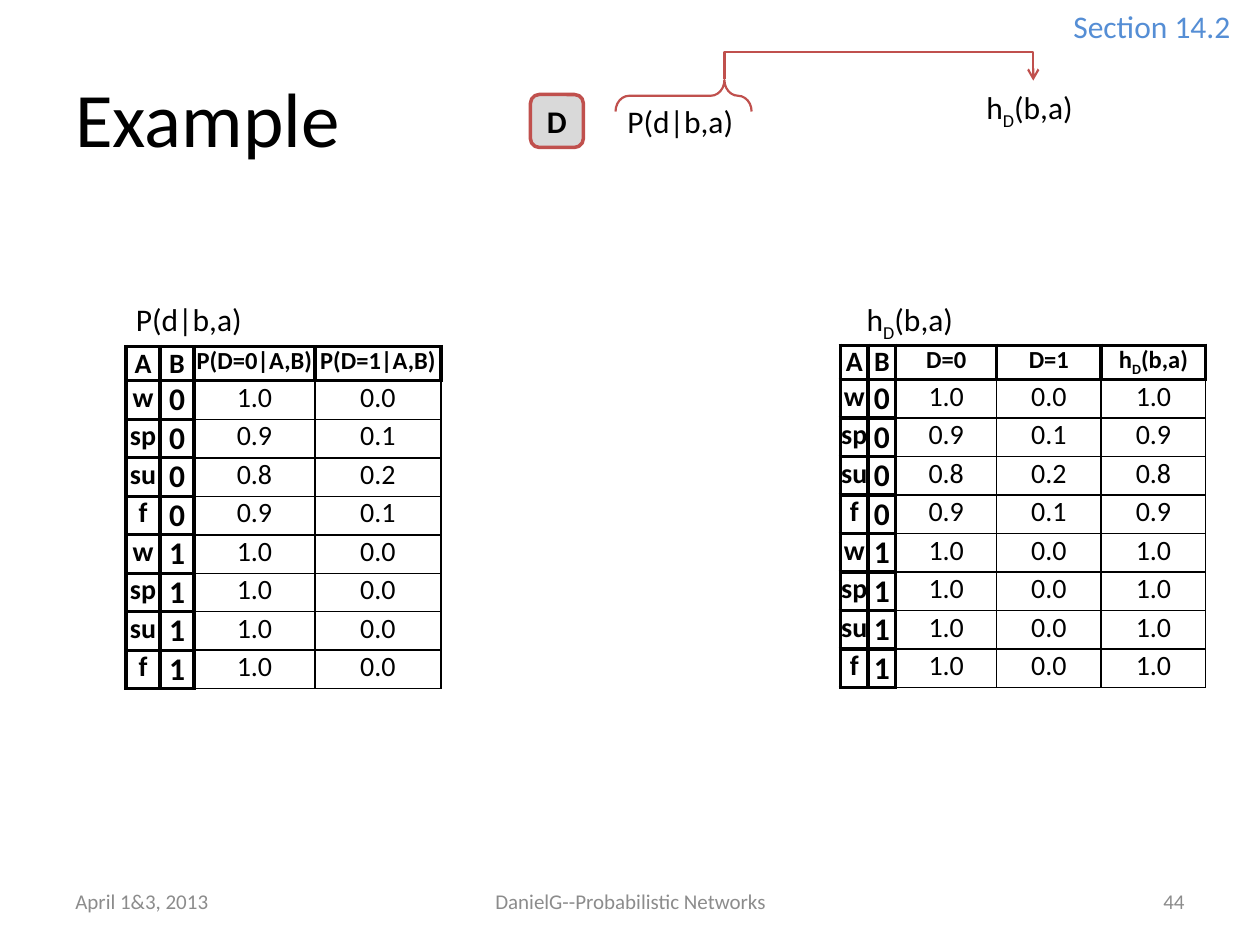
from lxml import etree
from pptx import Presentation
from pptx import util as u
from pptx.dml.color import RGBColor
from pptx.enum import shapes, text
from pptx.oxml import parse_xml
from pptx.oxml.ns import nsdecls, qn

COLORS = {"black": "000000", "gray": "8C8C8C", "red": "C0504D",
          "light": "D9D9D9", "blue": "558ED5"}
LEFT, CENTER, RIGHT = text.PP_ALIGN.LEFT, text.PP_ALIGN.CENTER, text.PP_ALIGN.RIGHT
MIDDLE, TOP = text.MSO_ANCHOR.MIDDLE, text.MSO_ANCHOR.TOP
GROW, FIXED = text.MSO_AUTO_SIZE.SHAPE_TO_FIT_TEXT, text.MSO_AUTO_SIZE.NONE


def write(frame, content, size=18, color="black", bold=False, align=LEFT):
    paragraph = frame.paragraphs[0]
    paragraph.alignment = align
    for index, part in enumerate(content.split("_")):
        run = paragraph.add_run()
        run.text = part
        run.font.name = "Calibri"
        run.font.size = u.Pt(size)
        run.font.bold = bold
        run.font.color.rgb = RGBColor.from_string(COLORS[color])
        if index % 2:
            run.font._element.set("baseline", "-25000")


def set_borders(cell, widths):
    properties = cell._tc.get_or_add_tcPr()
    for index, (side, width) in enumerate(widths.items()):
        properties.insert(index, parse_xml(
            f'<a:ln{side} {nsdecls("a")} w="{u.Pt(width)}"><a:solidFill>'
            f'<a:srgbClr val="{COLORS["black"]}"/></a:solidFill></a:ln{side}>'))


presentation = Presentation()
presentation.slide_width = u.Inches(10)
presentation.slide_height = u.Inches(7.5)
slide = presentation.slides.add_slide(presentation.slide_layouts[6])

seasons = ["w", "sp", "su", "f"] * 2
chances = [("1.0", "0.0"), ("0.9", "0.1"), ("0.8", "0.2"), ("0.9", "0.1")] + [("1.0", "0.0")] * 4
probability_rows = [(season, str(index // 4), *chance)
                    for index, (season, chance) in enumerate(zip(seasons, chances))]
factor_rows = [(*row, row[2]) for row in probability_rows]

tables = [
    (1, 2.75, [0.27, 0.27, 0.96, 1],
     [("A", "B", "P(D=0|A,B)", "P(D=1|A,B)")] + probability_rows),
    (6.67, 2.74, [0.22, 0.22, 0.8, 0.83, 0.83],
     [("A", "B", "D=0", "D=1", "h_D_(b,a)")] + factor_rows),
]
for left, top, column_widths, rows in tables:
    graphic = slide.shapes.add_table(len(rows), len(column_widths), u.Inches(left), u.Inches(top),
                                     u.Inches(sum(column_widths)), u.Inches(2.67))
    table = graphic.table
    table.first_row = table.horz_banding = False
    for column, width in zip(table.columns, column_widths):
        column.width = u.Inches(width)
    for row_index, row in enumerate(rows):
        table.rows[row_index].height = u.Inches(0.21)
        for column_index, value in enumerate(row):
            cell = table.cell(row_index, column_index)
            cell.margin_left = cell.margin_right = cell.margin_top = cell.margin_bottom = 0
            cell.fill.background()
            header, key = row_index == 0, column_index < 2
            size = 14 if header and not key else 18 if column_index == 1 and not header else 16
            write(cell.text_frame, value, size=size, bold=header or key, align=CENTER)
            base = 2.25 if header or key else 1
            set_borders(cell, {"L": 2.25 if column_index == 2 else base, "R": base,
                               "T": 2.25 if row_index == 1 else base, "B": base})
    graphic.height = u.Inches(2.67)

labels = [
    ("Example", (0.5, 0.3, 9, 1.25), MIDDLE, FIXED, True, {"size": 44}),
    ("April 1&3, 2013", (0.5, 6.95, 2.33, 0.4), MIDDLE, FIXED, True,
     {"size": 12, "color": "gray"}),
    ("DanielG--Probabilistic Networks", (3.42, 6.95, 3.17, 0.4), MIDDLE, FIXED, True,
     {"size": 12, "color": "gray", "align": CENTER}),
    ("44", (7.17, 6.95, 2.33, 0.4), MIDDLE, FIXED, True,
     {"size": 12, "color": "gray", "align": RIGHT}),
    ("P(d|b,a)", (4.88, 0.76, 1.08, 0.4), TOP, GROW, True, {}),
    ("h_D_(b,a)", (7.73, 0.65, 0.94, 0.4), TOP, GROW, True, {}),
    ("P(d|b,a)", (0.98, 2.33, 1.08, 0.4), TOP, GROW, True, {}),
    ("h_D_(b,a)", (6.78, 2.33, 0.94, 0.4), TOP, GROW, True, {}),
    ("Section 14.2", (8.42, 0.01, 1.52, 0.4), TOP, GROW, False, {"color": "blue"}),
]
for content, box, anchor, sizing, wrap, style in labels:
    frame = slide.shapes.add_textbox(*map(u.Inches, box)).text_frame
    frame.word_wrap = wrap
    frame.auto_size = sizing
    frame.vertical_anchor = anchor
    write(frame, content, **style)

node = slide.shapes.add_shape(shapes.MSO_SHAPE.ROUNDED_RECTANGLE, u.Inches(4.21), u.Inches(0.75),
                              u.Inches(0.42), u.Inches(0.42))
node.fill.solid()
node.fill.fore_color.rgb = RGBColor.from_string(COLORS["light"])
node.text_frame.vertical_anchor = MIDDLE
write(node.text_frame, "D", bold=True, align=CENTER)

brace = slide.shapes.add_shape(shapes.MSO_SHAPE.LEFT_BRACE, u.Inches(5.3), u.Inches(0.22),
                               u.Inches(0.25), u.Inches(1.08))
brace.rotation = 90
brace.adjustments[0] = 0.58
brace.adjustments[1] = 0.2
brace.fill.background()

arrow = slide.shapes.add_connector(shapes.MSO_CONNECTOR.ELBOW, u.Inches(6.98), u.Inches(-0.59),
                                   u.Inches(6.97), u.Inches(1.86))
arrow_properties = arrow._element.spPr
arrow_properties.find(qn("a:xfrm")).set("rot", str(270 * 60000))
geometry = arrow_properties.find(qn("a:prstGeom"))
guides = geometry.find(qn("a:avLst"))
if guides is None:
    guides = etree.SubElement(geometry, qn("a:avLst"))
etree.SubElement(guides, qn("a:gd"), name="adj1", fmla="val -2200000")

for shape, width in ((node, 2), (brace, 1.25), (arrow, 1.25)):
    shape.line.color.rgb = RGBColor.from_string(COLORS["red"])
    shape.line.width = u.Pt(width)
node.shadow.inherit = False
brace.shadow.inherit = False
etree.SubElement(arrow.line._get_or_add_ln(), qn("a:tailEnd"), type="arrow")
etree.SubElement(arrow_properties, qn("a:effectLst"))

presentation.save("out.pptx")
